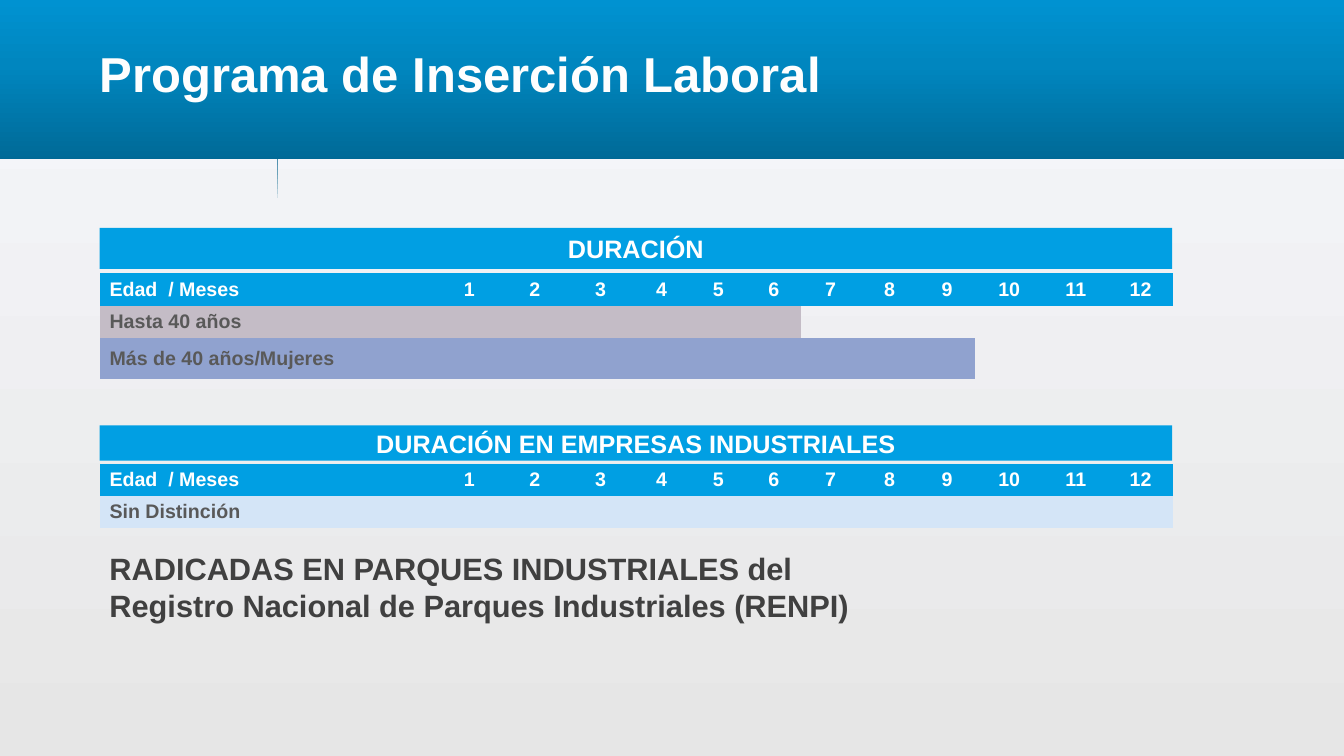
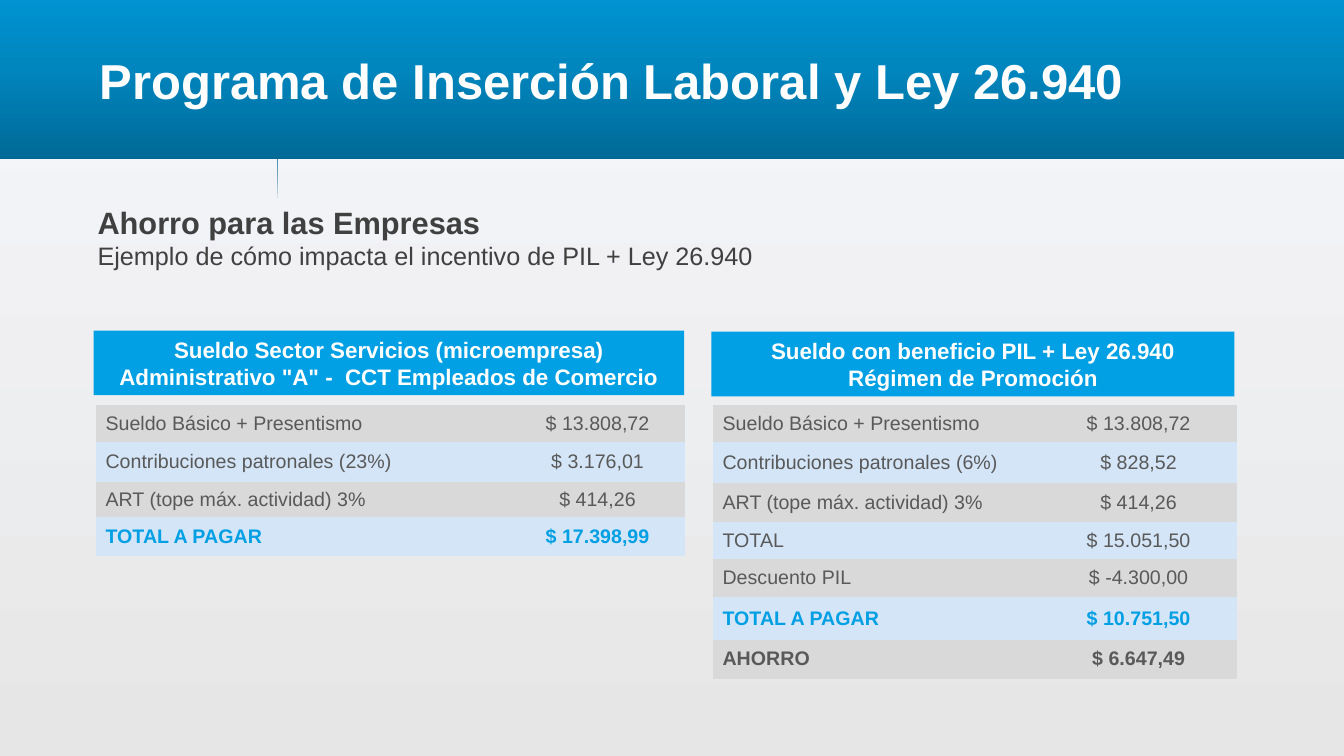
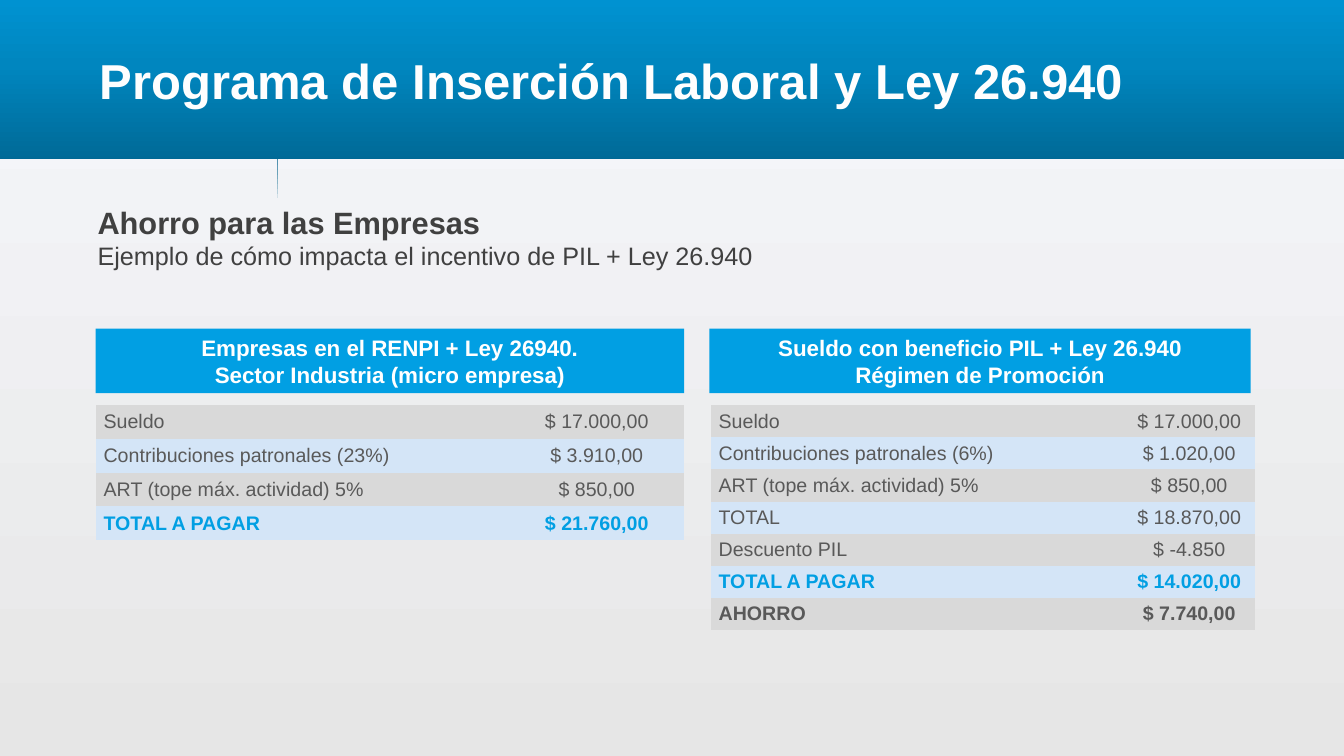
from copy import deepcopy
from dataclasses import dataclass

from pptx import Presentation
from pptx import util as u
from pptx.dml.color import RGBColor
from pptx.enum import shapes, text
from pptx.oxml.ns import qn

Cm, Pt = u.Cm, u.Pt
LEFT, CENTER = text.PP_ALIGN.LEFT, text.PP_ALIGN.CENTER
TOP, MIDDLE = text.MSO_ANCHOR.TOP, text.MSO_ANCHOR.MIDDLE


@dataclass(frozen=True)
class Theme:
    font: str = "Arial"
    plain_table: str = "{2D5ABB26-0587-4C30-8999-92F81FD0307C}"
    blue: str = "009FE3"
    bar: str = "019FE3"
    white: str = "FFFFFF"
    title: str = "FEFEFE"
    body: str = "404040"
    cell: str = "595959"
    grey: str = "D9D9D9"
    pale: str = "D4E5F7"
    mauve: str = "C4BCC6"
    violet: str = "90A2CF"
    page: tuple = ((3, "F6F7FB"), (100, "E6E6E6"))
    band: tuple = ((0, "005E86"), (67, "0086BF"), (100, "0092D1"))
    title_pt: int = 35
    lead_pt: int = 22
    bar_pt: int = 18
    head_pt: int = 16
    cell_pt: int = 14


T = Theme()
WIDTH, HEIGHT = 33.87, 19.05
BAND_H, NOTCH_X = 3.71, 6.73
NOTCH = [(1.18, BAND_H), (0.13, 4.5), (0.05, 4.54)]
TITLE_X, MARGIN, GANTT_W = 2.26, 2.51, 27.03
TABLE_Y, HEAD_H = 10.21, 1.63

DURATION_TITLE = "Programa de Inserción Laboral"
SAVING_TITLE = "Programa de Inserción Laboral y Ley 26.940"
GANTT_HEAD = ["Edad  / Meses", *map(str, range(1, 13))]
GANTT_COLS = [8.5, 1.63, 1.68, 1.63, 1.45, 1.4, 1.4, 1.47, 1.5, 1.4, 1.73, 1.63, 1.63]
GANTTS = [
    dict(title="DURACIÓN", bar=(5.74, 1.04), top=6.88, heights=[0.83, 0.81, 1.03],
         rows=[("Hasta 40 años", 6, T.mauve), ("Más de 40 años/Mujeres", 9, T.violet)]),
    dict(title="DURACIÓN EN EMPRESAS INDUSTRIALES", bar=(10.72, 0.89), top=11.69,
         heights=[0.81, 0.81], rows=[("Sin Distinción", 12, T.pale)]),
]
PARKS = ["RADICADAS EN PARQUES INDUSTRIALES del",
         "Registro Nacional de Parques Industriales (RENPI)"]
LEAD = "Ahorro para las Empresas"
SUBLEAD = "Ejemplo de cómo impacta el incentivo de PIL + Ley 26.940"
PROMOTION = ["Sueldo con beneficio PIL + Ley 26.940", "Régimen de Promoción"]
TOTAL, SAVING = "TOTAL A PAGAR", "AHORRO"
SAVINGS = [
    [
        dict(head=["Sueldo Sector Servicios (microempresa)",
                   'Administrativo "A" -  CCT Empleados de Comercio'],
             box=(2.36, 8.33, 14.88), x=2.41, cols=[10.44, 4.42], inset=0.25,
             heights=[0.93, 1.01, 0.88, 0.98],
             rows=[("Sueldo Básico + Presentismo", "$ 13.808,72"),
                   ("Contribuciones patronales (23%)", "$ 3.176,01"),
                   ("ART (tope máx. actividad) 3%", "$ 414,26"),
                   (TOTAL, "$ 17.398,99")]),
        dict(head=PROMOTION, box=(17.93, 8.36, 13.18), x=17.96, cols=[8.26, 4.95],
             inset=0.25, heights=[0.93, 1.03, 0.98, 0.93, 0.96, 1.08, 0.98],
             rows=[("Sueldo Básico + Presentismo", "$ 13.808,72"),
                   ("Contribuciones patronales (6%)", "$ 828,52"),
                   ("ART (tope máx. actividad) 3%", "$ 414,26"),
                   ("TOTAL", "$ 15.051,50"),
                   ("Descuento PIL", "$ -4.300,00"),
                   (TOTAL, "$ 10.751,50"),
                   (SAVING, "$ 6.647,49")]),
    ],
    [
        dict(head=["Empresas en el RENPI + Ley 26940.", "Sector Industria (micro empresa)"],
             box=(2.41, 8.28, 14.83), x=2.41, cols=[10.42, 4.42], inset=0.2,
             heights=[0.85] * 4,
             rows=[("Sueldo", "$ 17.000,00"),
                   ("Contribuciones patronales (23%)", "$ 3.910,00"),
                   ("ART (tope máx. actividad) 5%", "$ 850,00"),
                   (TOTAL, "$ 21.760,00")]),
        dict(head=PROMOTION, box=(17.88, 8.28, 13.64), x=17.91, cols=[10.41, 3.3],
             inset=0.2, heights=[0.81] * 7,
             rows=[("Sueldo", "$ 17.000,00"),
                   ("Contribuciones patronales (6%)", "$ 1.020,00"),
                   ("ART (tope máx. actividad) 5%", "$ 850,00"),
                   ("TOTAL", "$ 18.870,00"),
                   ("Descuento PIL", "$ -4.850"),
                   (TOTAL, "$ 14.020,00"),
                   (SAVING, "$ 7.740,00")]),
    ],
]


def set_all(obj, values):
    for name, value in values.items():
        setattr(obj, name, value)


def write(tf, lines, align=LEFT, anchor=MIDDLE):
    set_all(tf, dict(word_wrap=True, vertical_anchor=anchor))
    for i, (line, size, color, bold) in enumerate(lines):
        p = tf.add_paragraph() if i else tf.paragraphs[0]
        p.alignment = align
        r = p.add_run()
        r.text = line
        set_all(r.font, dict(name=T.font, size=Pt(size), bold=bold))
        r.font.color.rgb = RGBColor.from_string(color)


def solid(fill, color):
    fill.solid()
    fill.fore_color.rgb = RGBColor.from_string(color)


def gradient(fill, element, stops, angle):
    fill.gradient()
    fill.gradient_angle = angle
    gs = element.find(".//" + qn("a:gsLst"))
    while len(gs) < len(stops):
        gs.append(deepcopy(gs[0]))
    for stop, (percent, color) in zip(fill.gradient_stops, stops):
        stop.position = percent / 100
        stop.color.rgb = RGBColor.from_string(color)


def add_text(s, box, lines, anchor=TOP):
    sp = s.shapes.add_textbox(*map(Cm, box))
    write(sp.text_frame, lines, anchor=anchor)


def add_bar(s, box, lines, size):
    sp = s.shapes.add_shape(shapes.MSO_SHAPE.RECTANGLE, *map(Cm, box))
    sp.shadow.inherit = False
    solid(sp.fill, T.bar)
    sp.line.fill.background()
    write(sp.text_frame, [(line, size, T.white, True) for line in lines], CENTER)


def add_slide(prs, title, title_y):
    s = prs.slides.add_slide(prs.slide_layouts[6])
    gradient(s.background.fill, s.element, T.page, 270)
    left = [(NOTCH_X - dx, y) for dx, y in NOTCH]
    right = [(NOTCH_X + dx, y) for dx, y in reversed(NOTCH)]
    outline = s.shapes.build_freeform(WIDTH, 0, scale=Cm(1))
    outline.add_line_segments([(0, 0), (0, BAND_H), *left, *right, (WIDTH, BAND_H)])
    band = outline.convert_to_shape()
    band.shadow.inherit = False
    band.line.fill.background()
    gradient(band.fill, band.element, T.band, 90)
    add_text(s, (TITLE_X, title_y, 29.36, 2.69),
             [(title, T.title_pt, T.title, True)], MIDDLE)
    return s


def add_table(s, x, y, cols, heights):
    frame = s.shapes.add_table(len(heights), len(cols), Cm(x), Cm(y),
                               Cm(sum(cols)), Cm(sum(heights)))
    table = frame.table
    set_all(table, dict(first_row=False, horz_banding=False))
    frame.element.find(".//" + qn("a:tableStyleId")).text = T.plain_table
    for col, width in zip(table.columns, cols):
        col.width = Cm(width)
    for row, height in zip(table.rows, heights):
        row.height = Cm(height)
    return table


def fill_cell(cell, label, fill, color, bold, align, inset):
    set_all(cell, dict(margin_left=Cm(inset), margin_right=Cm(inset), margin_top=0,
                       margin_bottom=0, vertical_anchor=MIDDLE))
    if fill:
        solid(cell.fill, fill)
    else:
        cell.fill.background()
    if label:
        write(cell.text_frame, [(label, T.cell_pt, color, bold)], align)


def add_gantt(s, gantt):
    bar_y, bar_h = gantt["bar"]
    add_bar(s, (MARGIN, bar_y, GANTT_W, bar_h), [gantt["title"]], T.bar_pt)
    table = add_table(s, MARGIN, gantt["top"], GANTT_COLS, gantt["heights"])
    last = len(GANTT_COLS) - 1
    for c, label in enumerate(GANTT_HEAD):
        fill_cell(table.cell(0, c), label, T.blue, T.white, True,
                  CENTER if c else LEFT, 0.25)
    for i, (label, months, color) in enumerate(gantt["rows"], 1):
        for c in range(last + 1):
            fill_cell(table.cell(i, c), "" if c else label,
                      color if c <= months else None, T.cell, True, LEFT, 0.25)
        if months < last:
            table.cell(i, months + 1).merge(table.cell(i, last))


def add_saving(s, saving):
    add_bar(s, (*saving["box"], HEAD_H), saving["head"], T.head_pt)
    table = add_table(s, saving["x"], TABLE_Y, saving["cols"], saving["heights"])
    for i, row in enumerate(saving["rows"]):
        color = T.bar if row[0] == TOTAL else T.cell
        for c, label in enumerate(row):
            fill_cell(table.cell(i, c), label, T.pale if i % 2 else T.grey, color,
                      row[0] in (TOTAL, SAVING), CENTER if c else LEFT, saving["inset"])


def main():
    prs = Presentation()
    set_all(prs, dict(slide_width=Cm(WIDTH), slide_height=Cm(HEIGHT)))
    s = add_slide(prs, DURATION_TITLE, 0.5)
    for gantt in GANTTS:
        add_gantt(s, gantt)
    add_text(s, (MARGIN, 13.72, GANTT_W, 2.13),
             [(line, T.lead_pt, T.body, True) for line in PARKS])
    for pair in SAVINGS:
        s = add_slide(prs, SAVING_TITLE, 0.66)
        add_text(s, (2.21, 5.0, 22, 2.16), [(LEAD, T.lead_pt, T.body, True),
                                            (SUBLEAD, T.bar_pt, T.body, False)])
        for saving in pair:
            add_saving(s, saving)
    prs.save("out.pptx")


if __name__ == "__main__":
    main()
